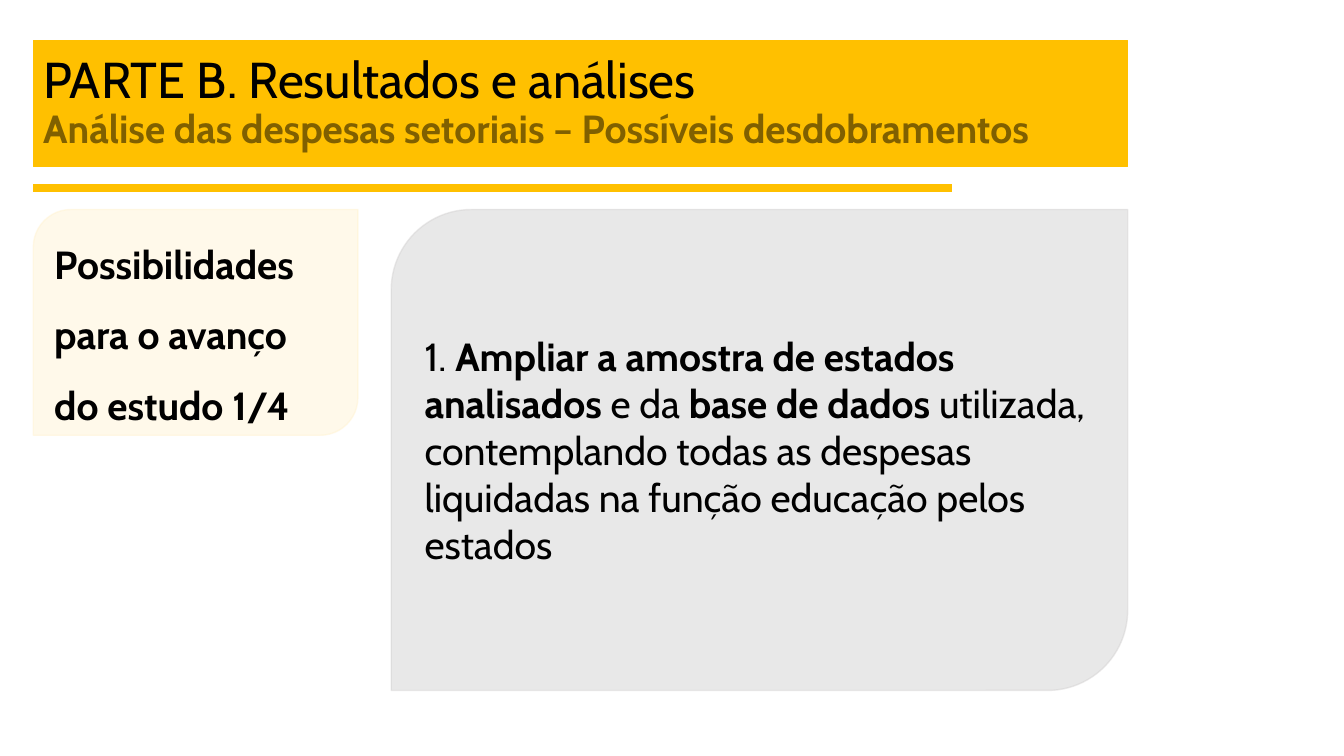
from lxml import etree
from pptx import Presentation
from pptx.dml.color import RGBColor
from pptx.enum.shapes import MSO_CONNECTOR, MSO_SHAPE
from pptx.enum.text import MSO_ANCHOR, PP_ALIGN
from pptx.oxml.ns import qn
from pptx.util import Cm, Pt

COLORS = {
    "gold": "FFC000",
    "brown": "806000",
    "cream": "FFF2CC",
    "gray": "C9C9C9",
    "gray_line": "D0CECE",
    "black": "000000",
}
LEFT = 0.84
RIGHT = 28.42
PANEL_TOP = 5.28
PANEL_LEFT = 9.86


def add_block(kind, left, top, width, height, fill, line, line_width, opacity=100):
    shape = slide.shapes.add_shape(kind, Cm(left), Cm(top), Cm(width), Cm(height))
    shape.shadow.inherit = False
    shape.fill.solid()
    shape.fill.fore_color.rgb = RGBColor.from_string(COLORS[fill])
    shape.line.color.rgb = RGBColor.from_string(COLORS[line])
    shape.line.width = Pt(line_width)
    if opacity < 100:
        for color in shape._element.spPr.iter(qn("a:srgbClr")):
            etree.SubElement(color, qn("a:alpha"), val=str(opacity * 1000))
    shape.text_frame.word_wrap = True
    shape.text_frame.vertical_anchor = MSO_ANCHOR.MIDDLE
    paragraph = shape.text_frame.paragraphs[0]
    paragraph.alignment = PP_ALIGN.LEFT
    return paragraph


def add_text(paragraph, text, bold=False, size=28, color="black"):
    run = paragraph.add_run()
    run.text = text
    run.font.name = "Cabin"
    run.font.size = Pt(size)
    run.font.bold = bold
    run.font.color.rgb = RGBColor.from_string(COLORS[color])


presentation = Presentation()
presentation.slide_width = Cm(33.87)
presentation.slide_height = Cm(19.05)
slide = presentation.slides.add_slide(presentation.slide_layouts[6])

# Rule below the title
rule = slide.shapes.add_connector(
    MSO_CONNECTOR.STRAIGHT, Cm(LEFT), Cm(4.73), Cm(23.98), Cm(4.73))
rule.line.color.rgb = RGBColor.from_string(COLORS["gold"])
rule.line.width = Pt(6)
etree.SubElement(rule._element.spPr, qn("a:effectLst"))

# Topic panel
topic = add_block(MSO_SHAPE.ROUND_2_DIAG_RECTANGLE, LEFT, PANEL_TOP, 8.18, 5.69,
                  "cream", "cream", 1, opacity=41)
topic.line_spacing = 1.5
topic.space_before = Pt(12)
add_text(topic, "Possibilidades para o avanço do estudo 1/4", bold=True)

# Proposal panel
proposal = add_block(MSO_SHAPE.ROUND_2_DIAG_RECTANGLE, PANEL_LEFT, PANEL_TOP,
                     RIGHT - PANEL_LEFT, 12.12, "gray", "gray_line", 1, opacity=41)
proposal.space_before = Pt(12)
for text, bold in [
    ("1. ", False),
    ("Ampliar a amostra de estados analisados ", True),
    ("e da ", False),
    ("base de dados ", True),
    ("utilizada, contemplando todas as despesas liquidadas na função educação "
     "pelos estados", False),
]:
    add_text(proposal, text, bold)

# Title band
title = add_block(MSO_SHAPE.RECTANGLE, LEFT, 1.02, RIGHT - LEFT, 3.18,
                  "gold", "gold", 0.75)
title.line_spacing = 0.9
add_text(title, "PARTE B. Resultados e análises", size=36)
title.add_line_break()
add_text(title, "Análise das despesas setoriais – Possíveis desdobramentos",
         bold=True, color="brown")

presentation.save("out.pptx")
